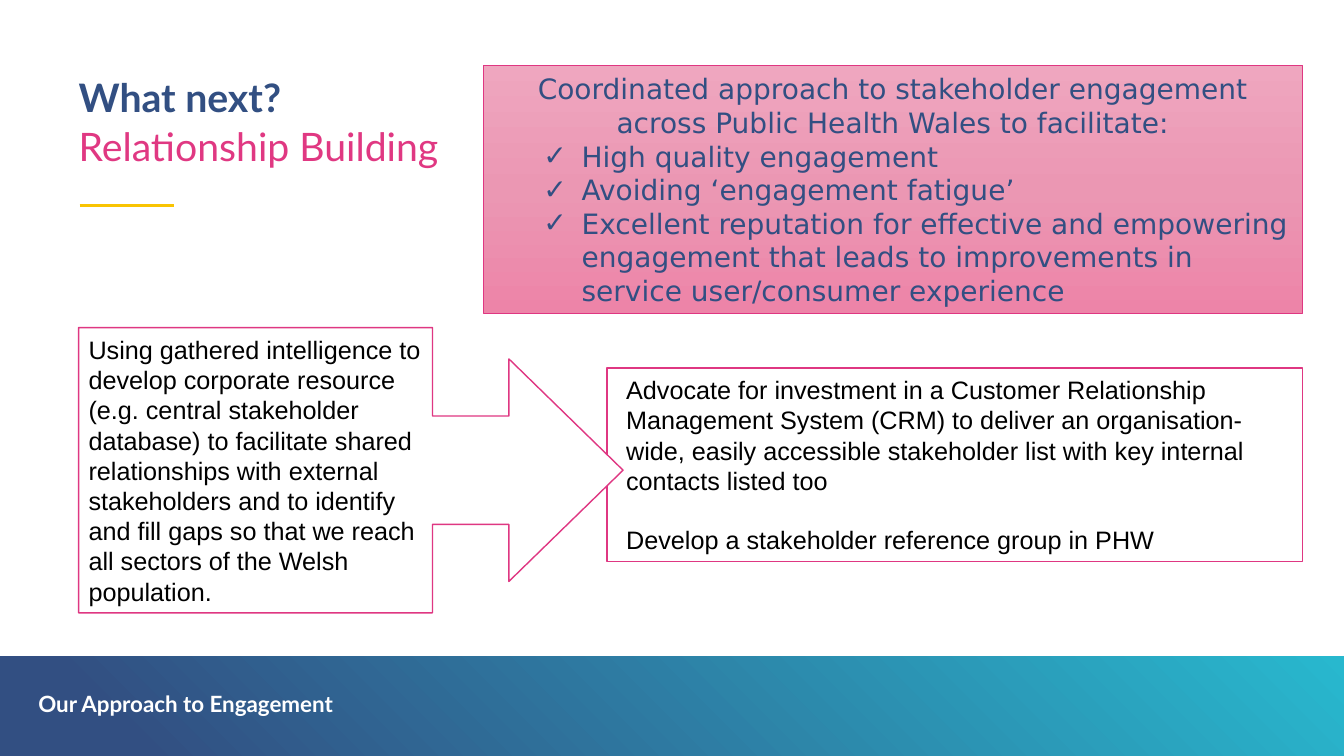
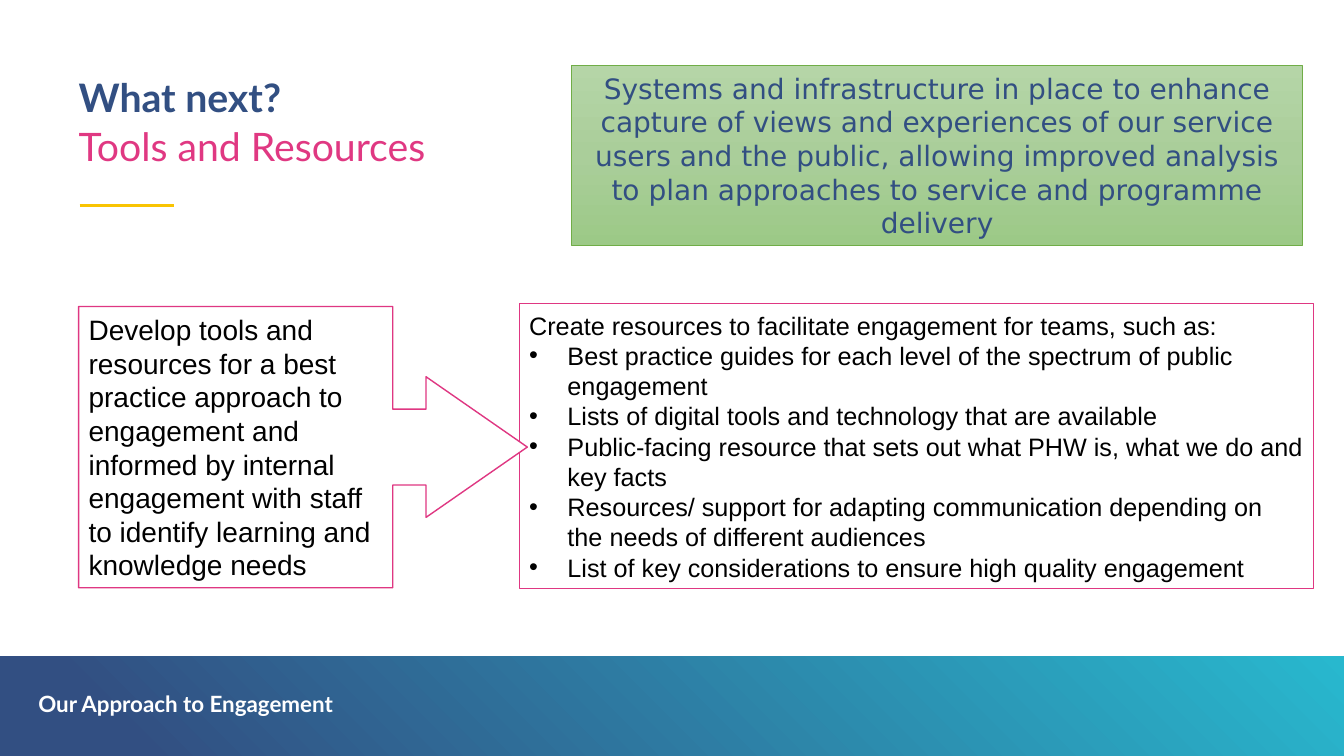
from copy import deepcopy

from lxml.etree import SubElement
from pptx import Presentation
from pptx.dml.color import RGBColor
from pptx.enum.shapes import MSO_CONNECTOR, MSO_SHAPE
from pptx.enum.text import MSO_ANCHOR, MSO_AUTO_SIZE, PP_ALIGN
from pptx.oxml.ns import qn
from pptx.util import Inches, Pt

NAVY = RGBColor(0x32, 0x4F, 0x82)
TEAL = RGBColor(0x28, 0xB8, 0xCE)
PINK = RGBColor(0xE0, 0x38, 0x82)
EDGE = RGBColor(0xDF, 0x37, 0x82)
GREEN = RGBColor(0x70, 0xAD, 0x47)
GOLD = RGBColor(0xF9, 0xC4, 0x02)
WHITE = RGBColor(0xFF, 0xFF, 0xFF)
BLACK = RGBColor(0, 0, 0)
ROSES = [(0, RGBColor(0xEF, 0xA6, 0xBF)), (0.5, RGBColor(0xEB, 0x97, 0xB3)),
         (1, RGBColor(0xED, 0x84, 0xA8))]
LEAVES = [(0, RGBColor(0xB5, 0xD5, 0xA7)), (0.5, RGBColor(0xAA, 0xCE, 0x9A)),
          (1, RGBColor(0x9C, 0xC9, 0x87))]
HEAD, BODY, GOAL = "Lato", "Arial", "DejaVu Sans"
WIDE, HIGH = 13.33, 7.5
LEFT = 0.78


def style(para, font, size, color, bold=False):
    para.font.name = font
    para.font.size = Pt(size)
    para.font.color.rgb = color
    para.font.bold = bold


def indent(para, left, first, mark=None, font=BODY):
    """Set the left and first-line indents, with a bullet or none."""
    props = para._p.get_or_add_pPr()
    props.set("marL", str(Inches(left)))
    props.set("indent", str(Inches(first)))
    if mark:
        SubElement(props, qn("a:buFont")).set("typeface", font)
        SubElement(props, qn("a:buChar")).set("char", mark)
    else:
        SubElement(props, qn("a:buNone"))


def blend(shape, stops, angle):
    """Fill with a linear gradient; the angle runs counter-clockwise."""
    fill = shape.fill
    fill.gradient()
    fill.gradient_angle = angle
    marks = shape._element.spPr.find(qn("a:gradFill")).find(qn("a:gsLst"))
    while len(marks) < len(stops):
        marks.append(deepcopy(marks[0]))
    for stop, (place, color) in zip(fill.gradient_stops, stops):
        stop.position = place
        stop.color.rgb = color


def draw(slide, kind, box, edge=None, width=1):
    """Add a white shape with left-hand text insets and an optional outline."""
    shape = slide.shapes.add_shape(kind, *map(Inches, box))
    shape.shadow.inherit = False
    shape.fill.solid()
    shape.fill.fore_color.rgb = WHITE
    if edge is None:
        shape.line.fill.background()
    else:
        shape.line.color.rgb = edge
        shape.line.width = Pt(width)
    shape.text_frame.word_wrap = True
    shape.text_frame.vertical_anchor = MSO_ANCHOR.MIDDLE
    return shape


def write(shape, lines, font, size, color, align=PP_ALIGN.LEFT):
    """Write the lines as paragraphs and return them."""
    frame = shape.text_frame
    frame.text = "\n".join(lines)
    for para in frame.paragraphs:
        para.alignment = align
        style(para, font, size, color)
    return frame.paragraphs


def label(holder, box, text, size, color, bold=False):
    """Place one line of heading type in a placeholder."""
    holder.left, holder.top, holder.width, holder.height = map(Inches, box)
    frame = holder.text_frame
    frame.margin_left = frame.margin_right = 0
    frame.margin_top = frame.margin_bottom = 0
    frame.word_wrap = True
    frame.auto_size = MSO_AUTO_SIZE.NONE
    frame.vertical_anchor = MSO_ANCHOR.TOP
    frame.text = text
    para = frame.paragraphs[0]
    indent(para, 0, 0)
    para.alignment = PP_ALIGN.LEFT
    para.line_spacing = 0.9
    para.space_before = Pt(0)
    style(para, HEAD, size, color, bold)


def base(deck, topic):
    """Start a slide with the shared band, rule, headings and footer."""
    slide = deck.slides.add_slide(deck.slide_layouts[3])
    title, sub, foot = slide.placeholders
    band = draw(slide, MSO_SHAPE.RECTANGLE, (0, 6.51, WIDE, HIGH - 6.51))
    blend(band, [(0.1, NAVY), (1, TEAL)], 45)
    slide.shapes._spTree.insert(2, band._element)
    rule = slide.shapes.add_connector(
        MSO_CONNECTOR.STRAIGHT, *map(Inches, (0.79, 2.04, 1.73, 2.04)))
    rule.line.color.rgb = GOLD
    rule.line.width = Pt(2.25)
    SubElement(rule._element.spPr, qn("a:effectLst"))
    label(title, (LEFT, 0.78, 11.77, 0.43), "What next?", 28, NAVY, True)
    label(sub, (LEFT, 1.27, 11.77, 0.43), topic, 28, PINK)
    label(foot, (0.38, 6.88, 3.93, 0.24), "Our Approach to Engagement",
          16, WHITE, True)
    return slide


def goal(slide, box, edge, stops, text, ticks=()):
    """Add the shaded aim box: a centred lead and ticked points."""
    shape = draw(slide, MSO_SHAPE.RECTANGLE, box, edge, 0.5)
    blend(shape, stops, 270)
    lead, *rest = write(shape, [text, *ticks], GOAL, 20, NAVY)
    lead.alignment = PP_ALIGN.CENTER
    mark_all(rest, 0.88, "✓", GOAL)


def mark_all(paras, left, mark, font):
    for para in paras:
        # Bullets must precede the font defaults in the paragraph properties.
        props = para._p.get_or_add_pPr()
        base_font = props.find(qn("a:defRPr"))
        indent(para, left, -0.38, mark, font)
        props.append(base_font)


def panel(slide, box, lines):
    shape = draw(slide, MSO_SHAPE.RECTANGLE, box, EDGE)
    return shape, write(shape, lines, BODY, 18, BLACK)


def callout(slide, box, ratios, text, size):
    shape = draw(slide, MSO_SHAPE.RIGHT_ARROW_CALLOUT, box, EDGE)
    for i, ratio in enumerate(ratios):
        shape.adjustments[i] = ratio
    write(shape, [text], BODY, size, BLACK)


def build_links(deck):
    slide = base(deck, "Relationship Building")
    goal(slide, (4.79, 0.65, 8.13, 2.46), EDGE, ROSES,
         "Coordinated approach to stakeholder engagement across Public Health "
         "Wales to facilitate:",
         ["High quality engagement",
          "Avoiding ‘engagement fatigue’",
          "Excellent reputation for effective and empowering engagement that "
          "leads to improvements in service user/consumer experience"])
    shape, paras = panel(slide, (6.02, 3.65, 6.9, 1.92), [
        "Advocate for investment in a Customer Relationship Management System "
        "(CRM) to deliver an organisation-wide, easily accessible stakeholder "
        "list with key internal contacts listed too",
        "Develop a stakeholder reference group in PHW"])
    shape.text_frame.margin_left = Inches(0.19)
    paras[1].space_before = Pt(21)
    callout(slide, (LEFT, 3.25, 5.4, 2.83), (0.38, 0.39, 0.4, 0.65),
            "Using gathered intelligence to develop corporate resource (e.g. "
            "central stakeholder database) to facilitate shared relationships "
            "with external stakeholders and to identify and fill gaps so that "
            "we reach all sectors of the Welsh population.", 18)


def build_tools(deck):
    slide = base(deck, "Tools and Resources")
    goal(slide, (5.67, 0.65, 7.25, 1.78), GREEN, LEAVES,
         "Systems and infrastructure in place to enhance capture of views and "
         "experiences of our service users and the public, allowing improved "
         "analysis to plan approaches to service and programme delivery")
    _, paras = panel(slide, (5.15, 3.01, 7.88, 2.83), [
        "Create resources to facilitate engagement for teams, such as:",
        "Best practice guides for each level of the spectrum of public "
        "engagement",
        "Lists of digital tools and technology that are available",
        "Public-facing resource that sets out what PHW is, what we do and key "
        "facts",
        "Resources/ support for adapting communication depending on the needs "
        "of different audiences",
        "List of key considerations to ensure high quality engagement"])
    mark_all(paras[1:], 0.38, "•", BODY)
    callout(slide, (LEFT, 3.04, 4.45, 2.79), (0.27, 0.25, 0.36, 0.7),
            "Develop tools and resources for a best practice approach to "
            "engagement and informed by internal engagement with staff to "
            "identify learning and knowledge needs", 20)


def main():
    deck = Presentation()
    deck.slide_width, deck.slide_height = Inches(WIDE), Inches(HIGH)
    build_links(deck)
    build_tools(deck)
    deck.save("out.pptx")


if __name__ == "__main__":
    main()
